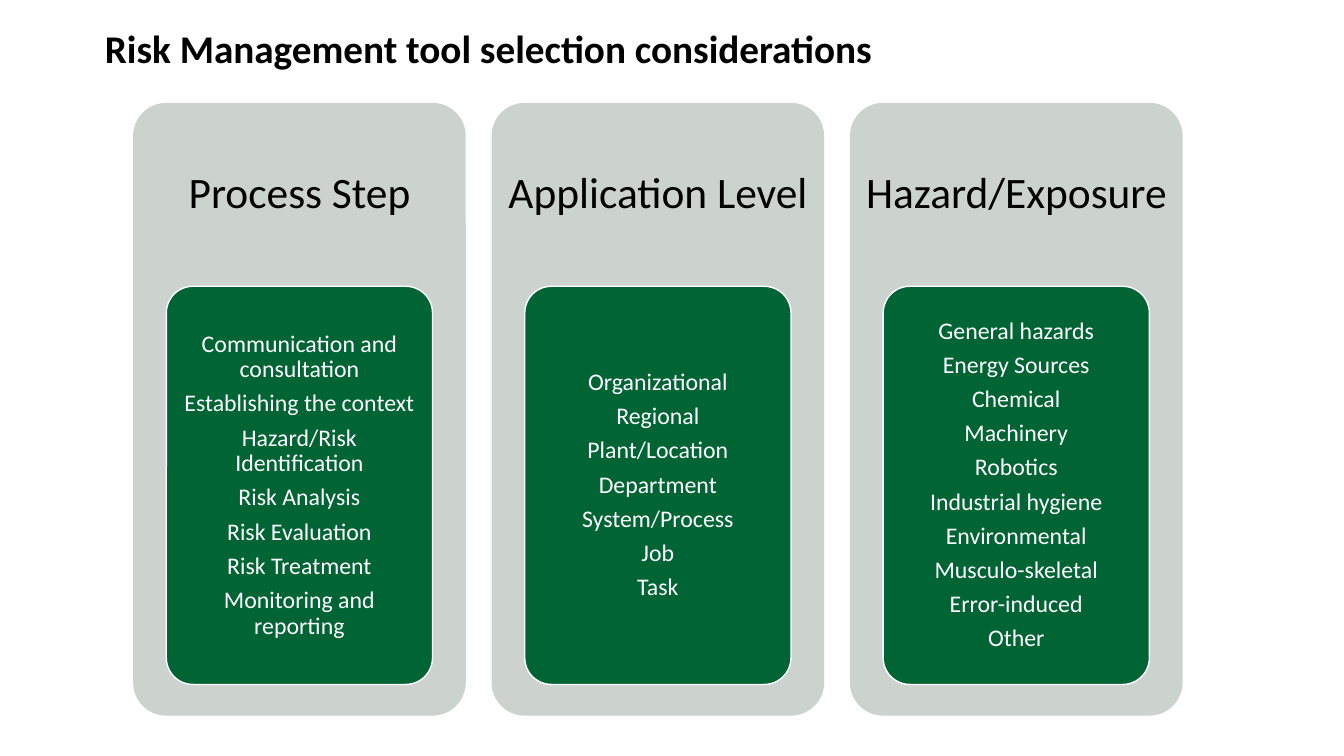
from pptx import Presentation
from pptx.dml.color import RGBColor
from pptx.enum.shapes import MSO_SHAPE
from pptx.enum.text import MSO_ANCHOR, MSO_AUTO_SIZE, PP_ALIGN
from pptx.util import Inches, Pt

ROUNDED = MSO_SHAPE.ROUNDED_RECTANGLE
TOP, MIDDLE = MSO_ANCHOR.TOP, MSO_ANCHOR.MIDDLE
LEFT, CENTER = PP_ALIGN.LEFT, PP_ALIGN.CENTER
NO_FIT = MSO_AUTO_SIZE.NONE
TITLE_ONLY = 5

COLORS = {"panel": "CCD3CE", "card": "006434", "light": "FFFFFF", "dark": "000000"}
FONT = "Calibri"

FIRST_LEFT, LAST_LEFT = 1.32, 8.43
PANEL_TOP, PANEL_WIDTH, PANEL_HEIGHT = 1.02, 3.3, 6.08
HEADING_HEIGHT = 1.82
CARD_INDENT, CARD_WIDTH, CARD_HEIGHT = 0.33, 2.64, 3.95

TITLE = "Risk Management tool selection considerations"
COLUMNS = {
    "Process Step": [
        "Communication and consultation", "Establishing the context",
        "Hazard/Risk Identification", "Risk Analysis", "Risk Evaluation",
        "Risk Treatment", "Monitoring and reporting",
    ],
    "Application Level": [
        "Organizational", "Regional", "Plant/Location", "Department",
        "System/Process", "Job", "Task",
    ],
    "Hazard/Exposure": [
        "General hazards", "Energy Sources", "Chemical", "Machinery", "Robotics",
        "Industrial hygiene", "Environmental", "Musculo-skeletal",
        "Error-induced", "Other",
    ],
}


def set_all(target, values):
    for name, value in values.items():
        setattr(target, name, value)


def rgb(name):
    return RGBColor.from_string(COLORS[name])


def write_text(box, lines, size, color, insets, bold=False, anchor=MIDDLE,
               paragraph_format=None):
    """Fill a shape with one paragraph per line; insets are (sides, top and bottom)."""
    frame = box.text_frame
    side, edge = (Inches(inset) for inset in insets)
    set_all(frame, {
        "word_wrap": True, "auto_size": NO_FIT, "vertical_anchor": anchor,
        "margin_left": side, "margin_right": side,
        "margin_top": edge, "margin_bottom": edge,
    })
    frame.text = "\n".join(lines)
    spaced = {"alignment": CENTER, "line_spacing": 0.9,
              "space_after": Pt(round(0.35 * size))}
    for para in frame.paragraphs:
        set_all(para, paragraph_format or spaced)
        for span in para.runs:
            set_all(span.font, {"name": FONT, "size": Pt(size), "bold": bold})
            span.font.color.rgb = rgb(color)


def add_rounded(page, area, fill, line=None):
    box = page.shapes.add_shape(ROUNDED, *map(Inches, area))
    box.adjustments[0] = 0.1
    box.shadow.inherit = False
    box.fill.solid()
    box.fill.fore_color.rgb = rgb(fill)
    if line:
        box.line.color.rgb = rgb(line)
        box.line.width = Pt(1)
    else:
        box.line.fill.background()
    return box


def add_title(page):
    title = page.shapes.title
    set_all(title, {"left": Inches(0.94), "top": Inches(0.19),
                    "width": Inches(9.14), "height": Inches(0.57)})
    write_text(title, [TITLE], 28, "dark", (0.1, 0.05), bold=True, anchor=TOP,
               paragraph_format={"alignment": LEFT})


def add_column(page, left, heading, items):
    add_rounded(page, (left, PANEL_TOP, PANEL_WIDTH, PANEL_HEIGHT), "panel")
    heading_area = (left, PANEL_TOP, PANEL_WIDTH, HEADING_HEIGHT)
    label = page.shapes.add_textbox(*map(Inches, heading_area))
    write_text(label, [heading], 31, "dark", (0.13, 0.13))
    card_area = (left + CARD_INDENT, PANEL_TOP + HEADING_HEIGHT,
                 CARD_WIDTH, CARD_HEIGHT)
    card = add_rounded(page, card_area, "card", line="light")
    write_text(card, items, 17, "light", (0.05, 0.04))


def main():
    deck = Presentation()
    deck.slide_width, deck.slide_height = Inches(13.33), Inches(7.5)
    page = deck.slides.add_slide(deck.slide_layouts[TITLE_ONLY])
    add_title(page)
    pitch = (LAST_LEFT - FIRST_LEFT) / (len(COLUMNS) - 1)
    for index, (heading, items) in enumerate(COLUMNS.items()):
        add_column(page, FIRST_LEFT + index * pitch, heading, items)
    deck.save("out.pptx")


if __name__ == "__main__":
    main()
